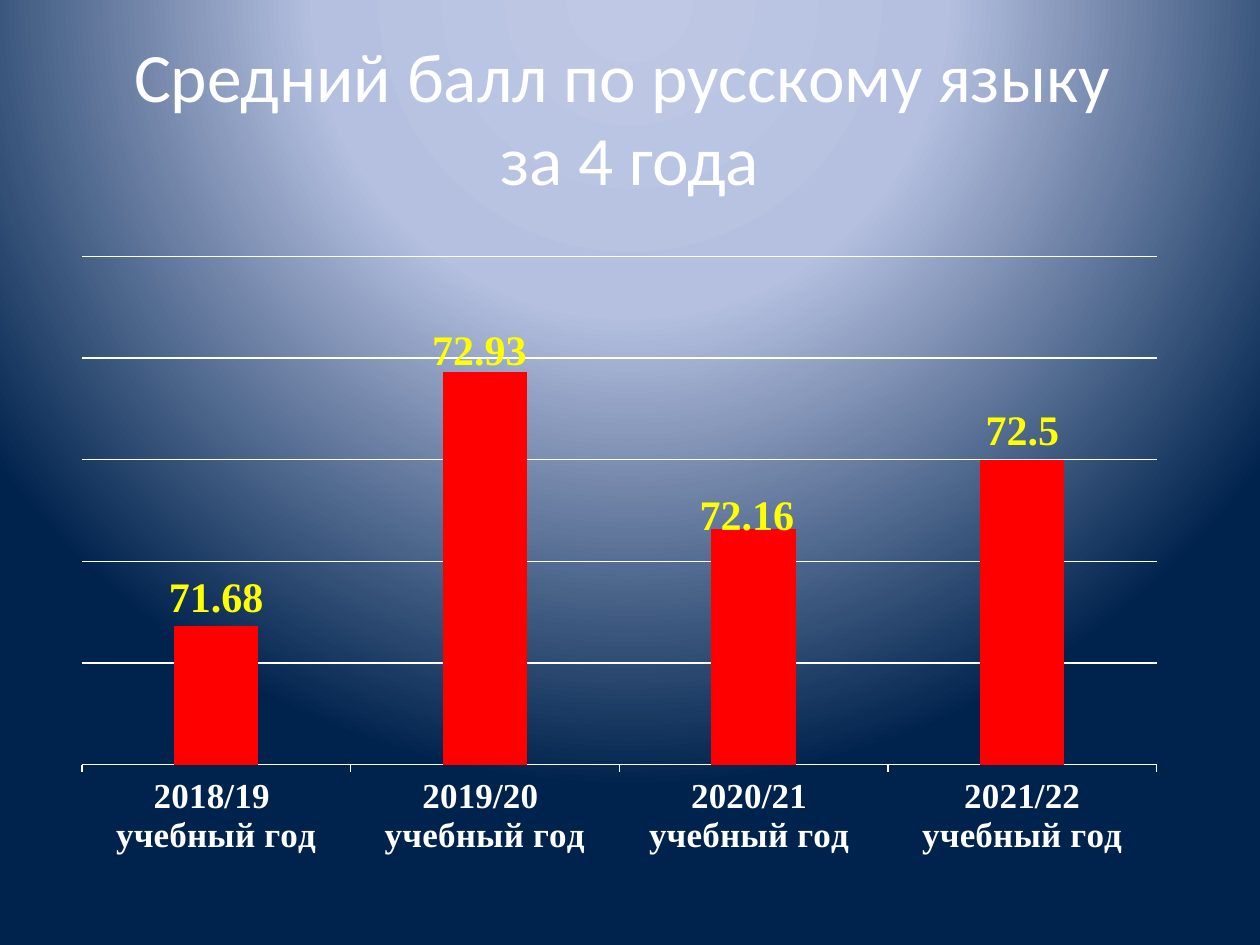
import pptx
import pptx.chart.data
import pptx.dml.color
import pptx.enum.chart
import pptx.enum.text
import pptx.oxml
import pptx.oxml.ns
import pptx.util

Cm = pptx.util.Cm
Pt = pptx.util.Pt
qn = pptx.oxml.ns.qn
COLORS = {"text": "FFFFFF", "bar": "FF0000", "label": "FFFF00",
          "glow": "BFC9E5", "mid": "B5C0E0", "navy": "00234D"}
SERIF = "Times New Roman"


def rgb(name):
    return pptx.dml.color.RGBColor.from_string(COLORS[name])


def style_font(font, size, color, name, bold=False):
    font.size = Pt(size)
    font.bold = bold
    font.name = name
    font.color.rgb = rgb(color)


prs = pptx.Presentation()
prs.slide_width = Cm(25.4)
prs.slide_height = Cm(19.05)
s = prs.slides.add_slide(prs.slide_layouts[5])

s.background.fill.gradient()
stops = "".join(
    f'<a:gs pos="{pos * 1000}"><a:srgbClr val="{COLORS[name]}"/></a:gs>'
    for pos, name in ((0, "glow"), (40, "mid"), (100, "navy")))
grad = pptx.oxml.parse_xml(
    f'<a:gradFill {pptx.oxml.ns.nsdecls("a")} rotWithShape="1"><a:gsLst>{stops}</a:gsLst>'
    '<a:path path="circle"><a:fillToRect l="50000" t="-80000" r="50000" b="180000"/>'
    '</a:path></a:gradFill>')
old = next(s.element.iter(qn("a:gradFill")))
old.getparent().replace(old, grad)

title = s.shapes.title
title.left, title.top, title.width, title.height = Cm(1.27), Cm(0.76), Cm(22.86), Cm(3.18)
tf = title.text_frame
tf.text = "Средний балл по русскому языку \vза 4 года"
tf.auto_size = pptx.enum.text.MSO_AUTO_SIZE.NONE
tf.vertical_anchor = pptx.enum.text.MSO_ANCHOR.MIDDLE
p = tf.paragraphs[0]
p.alignment = pptx.enum.text.PP_ALIGN.CENTER
for r in p.runs:
    style_font(r.font, 39.6, "text", "Calibri")

data = pptx.chart.data.CategoryChartData()
data.categories = ["2018/19 \nучебный год", "2019/20 \nучебный год",
                   "2020/21 \nучебный год ", "2021/22 учебный год"]
data.add_series("Series 1", (71.68, 72.93, 72.16, 72.5))
chart = s.shapes.add_chart(pptx.enum.chart.XL_CHART_TYPE.COLUMN_CLUSTERED,
                           Cm(1.27), Cm(4.45), Cm(22.43), Cm(13.49), data).chart
chart.has_legend = False
chart.has_title = False
style_font(chart.font, 10, "text", "Calibri")

cat_axis = chart.category_axis
cat_axis.major_tick_mark = pptx.enum.chart.XL_TICK_MARK.OUTSIDE
style_font(cat_axis.tick_labels.font, 20, "text", SERIF, True)

val_axis = chart.value_axis
val_axis.visible = False
val_axis.minimum_scale = 71
val_axis.maximum_scale = 73.5
val_axis.major_unit = 0.5
for line in (cat_axis.format.line, val_axis.major_gridlines.format.line):
    line.color.rgb = rgb("text")
    line.width = Pt(0.75)

plot = chart.plots[0]
plot.gap_width = 219
plot.vary_by_categories = False
series = plot.series[0]
series.format.fill.solid()
series.format.fill.fore_color.rgb = rgb("bar")

above = pptx.enum.chart.XL_LABEL_POSITION.OUTSIDE_END
labels = series.data_labels
labels.show_value = True
labels.position = above
style_font(labels.font, 24, "label", SERIF, True)

C_NS = pptx.oxml.ns.nsdecls("c")
for i, dx, dy in ((1, -0.005, 0.012), (2, -0.006, 0.024)):
    label = series.points[i].data_label
    style_font(label.font, 24, "label", SERIF, True)
    label.position = above
    idx = series.data_labels._element.findall(qn("c:dLbl"))[-1].find(qn("c:idx"))
    idx.addnext(pptx.oxml.parse_xml(
        f'<c:layout {C_NS}><c:manualLayout><c:x val="{dx}"/><c:y val="{dy}"/>'
        '</c:manualLayout></c:layout>'))

plot_area = next(chart.element.iter(qn("c:plotArea")))
for layout in plot_area.findall(qn("c:layout")):
    plot_area.remove(layout)
box = "".join(f'<c:{tag} val="{val}"/>' for tag, val in
              (("x", 0.017), ("y", 0.053), ("w", 0.966), ("h", 0.76)))
plot_area.insert(0, pptx.oxml.parse_xml(
    f'<c:layout {C_NS}><c:manualLayout><c:layoutTarget val="inner"/>'
    f'<c:xMode val="edge"/><c:yMode val="edge"/>{box}</c:manualLayout></c:layout>'))

prs.save("out.pptx")
